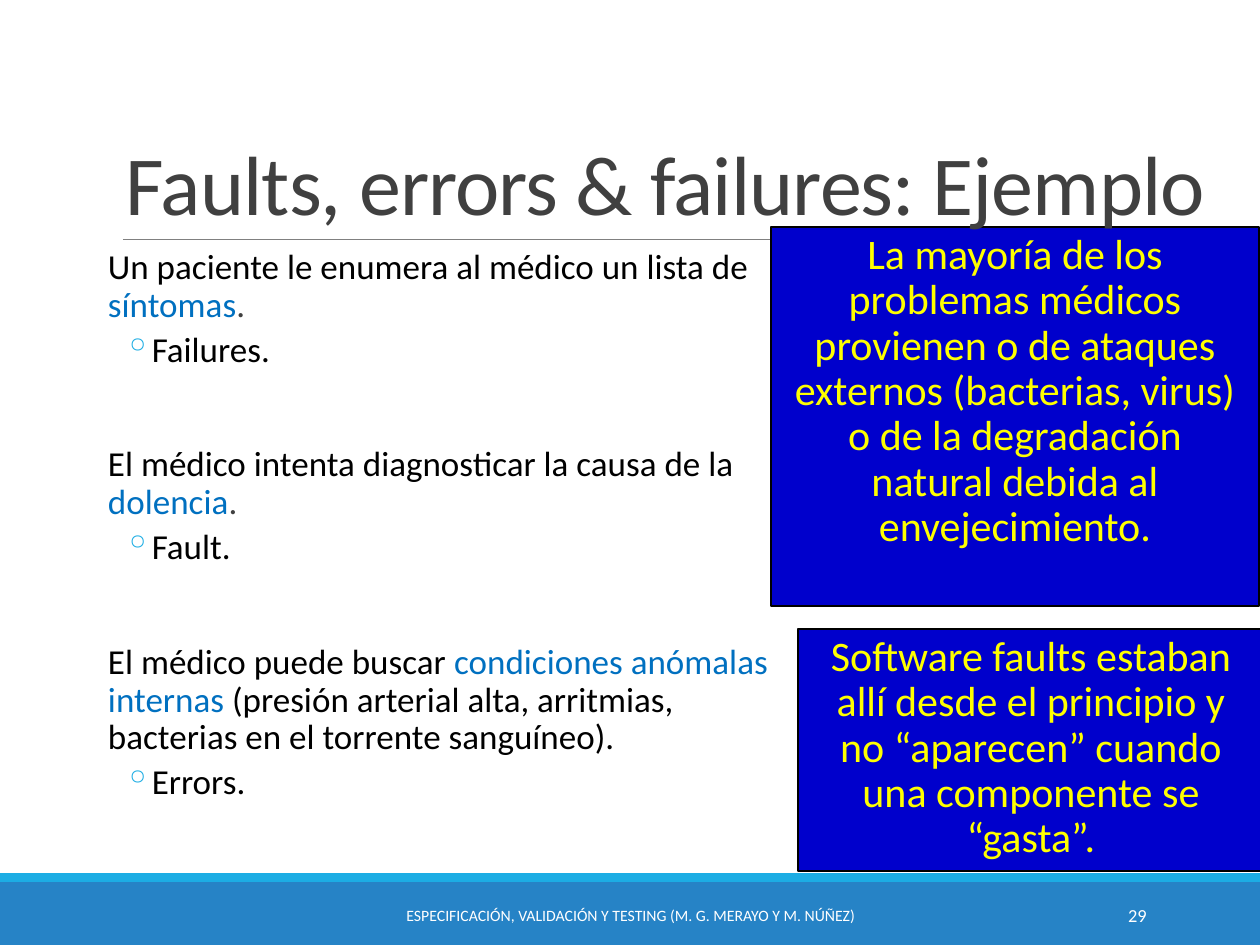
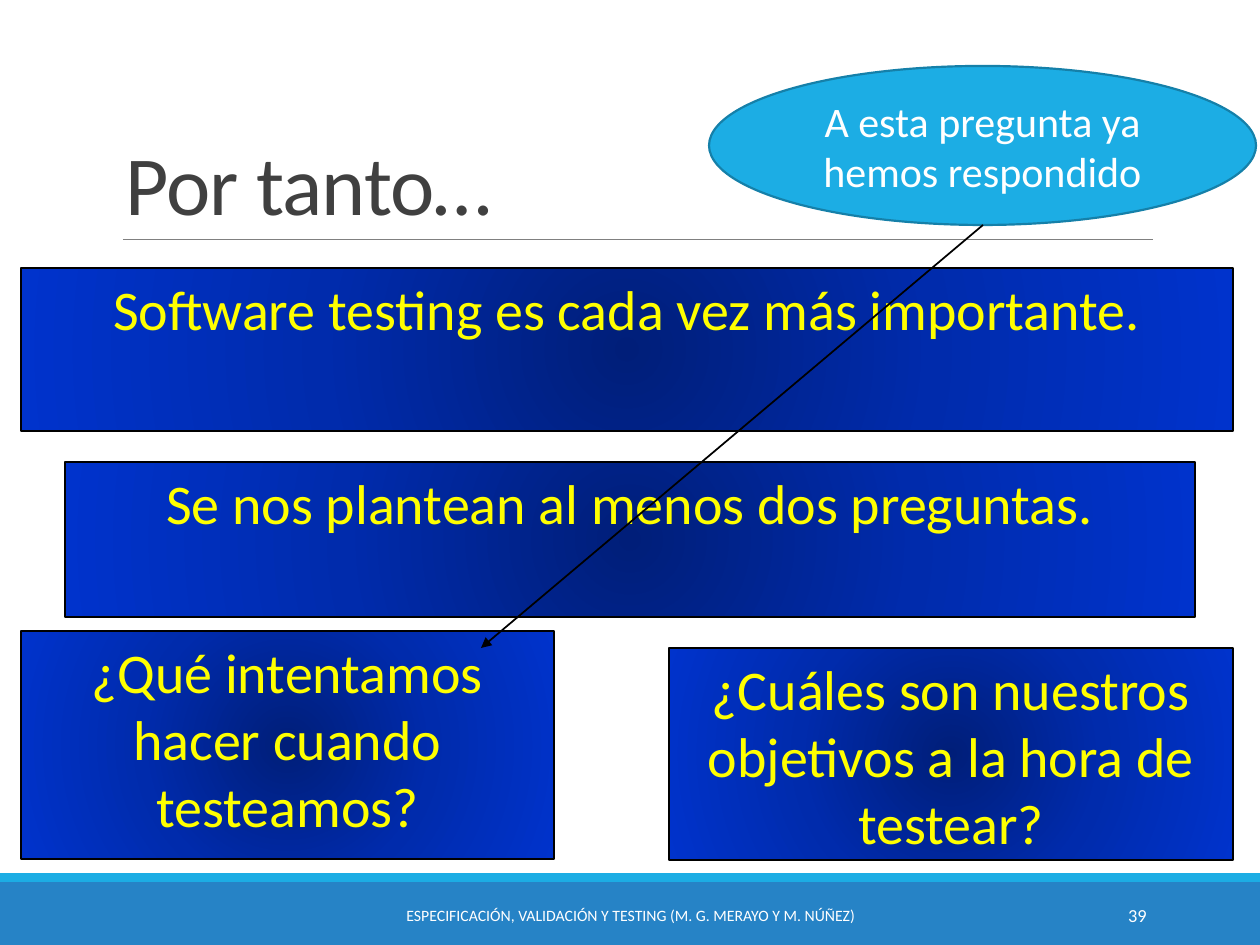
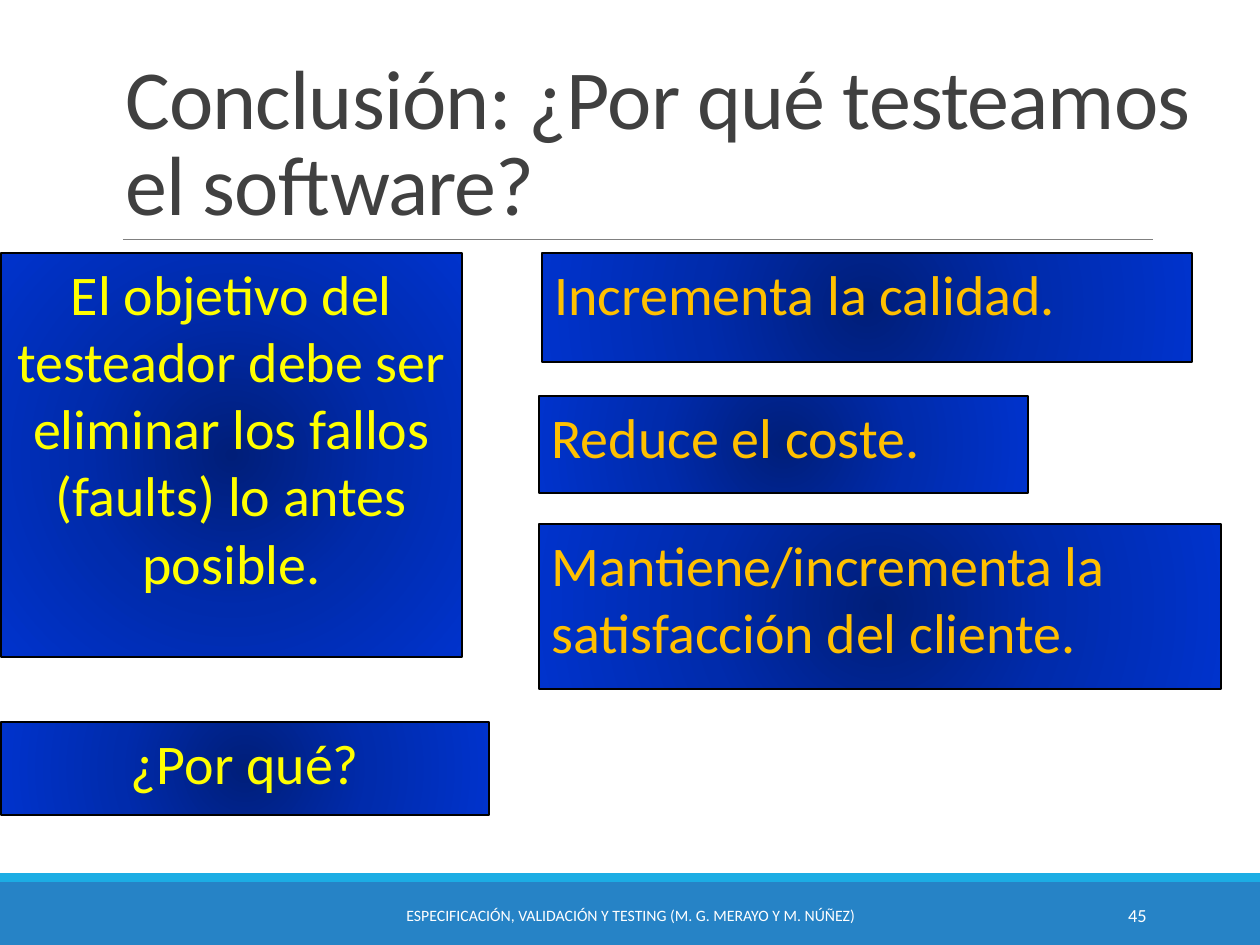
from dataclasses import dataclass

from pptx import Presentation
from pptx import oxml, util as u
from pptx.dml import color
from pptx.enum import shapes, text
from pptx.oxml import ns

# Shared look
EMU_PER_PX = 914400 / 126
PAGE_W, PAGE_H = 1260, 945
FONT = "Calibri"
BLUE, CYAN, CYAN_EDGE = "2683C6", "1CADE4", "1580A9"
NAVY, YELLOW, AMBER = "0000CC", "FFFF00", "FFC000"
BLACK, WHITE, GREY, RULE, TERM = "000000", "FFFFFF", "404040", "808080", "0070C0"
GLOW = ((0, "001E79"), (50, "002BAC"), (100, "0033CC"))
FOOTER = "ESPECIFICACIÓN, VALIDACIÓN Y TESTING (M. G. MERAYO Y M. NÚÑEZ)"
LEFT, CENTER, RIGHT = text.PP_ALIGN.LEFT, text.PP_ALIGN.CENTER, text.PP_ALIGN.RIGHT
TOP, MIDDLE, BOTTOM = text.MSO_ANCHOR.TOP, text.MSO_ANCHOR.MIDDLE, text.MSO_ANCHOR.BOTTOM
RECT, OVAL = shapes.MSO_SHAPE.RECTANGLE, shapes.MSO_SHAPE.OVAL


@dataclass(frozen=True)
class Area:
    left: int
    top: int
    width: int
    height: int


@dataclass(frozen=True)
class Style:
    size: float
    ink: str
    align: text.PP_ALIGN = LEFT
    anchor: text.MSO_ANCHOR = TOP
    spacing: float = 1.0
    tracking: int = 0


@dataclass(frozen=True)
class Panel:
    area: Area
    words: str
    style: Style
    fill: str | None = None  # None means the radial glow
    edge: str = BLACK
    edge_pt: float = 0.75
    outline: shapes.MSO_SHAPE = RECT


@dataclass(frozen=True)
class Symptom:
    spans: tuple[tuple[str, str], ...]
    kind: str


TITLE = Style(48, GREY, anchor=BOTTOM, spacing=0.85, tracking=-50)
FOOT = Style(9, WHITE, CENTER, MIDDLE)
NUMBER = Style(10.5, WHITE, RIGHT, MIDDLE)
REMARK = Style(24, YELLOW, CENTER, spacing=0.9)
CLAIM = Style(32, YELLOW, CENTER)
REASON = Style(32, AMBER)
CALLOUT = Style(24, WHITE, CENTER, MIDDLE)


# Helpers
def px(length: int) -> u.Emu:
    return u.Emu(round(length * EMU_PER_PX))


def rgb(code: str) -> color.RGBColor:
    return color.RGBColor.from_string(code)


def place(area: Area) -> tuple[u.Emu, ...]:
    return px(area.left), px(area.top), px(area.width), px(area.height)


def format_span(span, size: float, ink: str) -> None:
    span.font.name, span.font.size = FONT, u.Pt(size)
    span.font.color.rgb = rgb(ink)


def write(shape, words: str, style: Style) -> None:
    frame = shape.text_frame
    frame.text = words
    frame.word_wrap = True
    frame.vertical_anchor = style.anchor
    para = frame.paragraphs[0]
    para.alignment, para.line_spacing = style.align, style.spacing
    span = para.runs[0]
    format_span(span, style.size, style.ink)
    if style.tracking:
        span._r.get_or_add_rPr().set("spc", str(style.tracking))


def add_text(page, area: Area, words: str, style: Style) -> None:
    write(page.shapes.add_textbox(*place(area)), words, style)


def add_block(page, area: Area, fill: str, outline=RECT):
    block = page.shapes.add_shape(outline, *place(area))
    block.shadow.inherit = False
    block.fill.solid()
    block.fill.fore_color.rgb = rgb(fill)
    block.line.fill.background()
    return block


def apply_glow(shape) -> None:
    stops = "".join(f'<a:gs pos="{at * 1000}"><a:srgbClr val="{code}"/></a:gs>'
                    for at, code in GLOW)
    glow = oxml.parse_xml(
        f'<a:gradFill {ns.nsdecls("a")}><a:gsLst>{stops}</a:gsLst><a:path path="circle">'
        '<a:fillToRect l="50000" t="50000" r="50000" b="50000"/></a:path></a:gradFill>')
    props = shape._element.spPr
    props.replace(props.find(ns.qn("a:solidFill")), glow)


def add_panel(page, panel: Panel) -> None:
    box = add_block(page, panel.area, panel.fill or NAVY, panel.outline)
    if panel.fill is None:
        apply_glow(box)
    box.line.color.rgb = rgb(panel.edge)
    box.line.width = u.Pt(panel.edge_pt)
    write(box, panel.words, panel.style)


def add_line(page, start: tuple[int, int], end: tuple[int, int],
             ink: str, width: float, arrow: bool = False) -> None:
    line = page.shapes.add_connector(shapes.MSO_CONNECTOR.STRAIGHT,
                                     *map(px, start + end))
    line.line.color.rgb = rgb(ink)
    line.line.width = u.Pt(width)
    if arrow:
        line.line._get_or_add_ln().append(
            oxml.parse_xml(f'<a:tailEnd {ns.nsdecls("a")} type="triangle"/>'))
    line._element.spPr.append(oxml.parse_xml(f'<a:effectLst {ns.nsdecls("a")}/>'))


def indent(para, margin: int, first: int) -> None:
    props = para._p.get_or_add_pPr()
    props.set("marL", str(px(margin)))
    props.set("indent", str(px(first)))


def add_bullet(para) -> None:
    props = para._p.get_or_add_pPr()
    props.append(oxml.parse_xml(
        f'<a:buClr {ns.nsdecls("a")}><a:srgbClr val="{CYAN}"/></a:buClr>'))
    props.append(oxml.parse_xml(f'<a:buChar {ns.nsdecls("a")} char="◦"/>'))


def add_symptoms(page, area: Area, symptoms: tuple[Symptom, ...]) -> None:
    frame = page.shapes.add_textbox(*place(area)).text_frame
    frame.word_wrap = True
    frame.margin_left = frame.margin_right = 0
    for index, symptom in enumerate(symptoms):
        para = frame.add_paragraph() if index else frame.paragraphs[0]
        para.line_spacing, para.space_after = 0.9, u.Pt(2)
        para.space_before = u.Pt(40 if index else 12)
        indent(para, 12, 0)
        for words, ink in symptom.spans:
            span = para.add_run()
            span.text = words
            format_span(span, 20, ink)
        para = frame.add_paragraph()
        para.text = symptom.kind
        para.level, para.line_spacing = 1, 0.9
        para.space_before, para.space_after = u.Pt(2), u.Pt(4)
        indent(para, 53, -25)
        add_bullet(para)
        format_span(para.runs[0], 20, BLACK)


def start_page(deck):
    page = deck.slides.add_slide(deck.slide_layouts[6])
    add_block(page, Area(0, 882, PAGE_W, 63), BLUE)
    add_block(page, Area(0, 873, PAGE_W, 9), CYAN)
    add_line(page, (123, 239), (1153, 239), RULE, 0.5)
    return page


def finish_page(page, title: str, number: int, title_width: int = 1133) -> None:
    add_text(page, Area(381, 890, 499, 50), FOOTER, FOOT)
    add_text(page, Area(1023, 890, 136, 50), str(number), NUMBER)
    add_text(page, Area(113, 39, title_width, 200), title, TITLE)


# Content
SYMPTOMS = (
    Symptom((("Un paciente le enumera al médico un lista de ", BLACK),
             ("síntomas", TERM), (".", GREY)), "Failures."),
    Symptom((("El médico intenta diagnosticar la causa de la ", BLACK),
             ("dolencia", TERM), (".", GREY)), "Fault."),
    Symptom((("El médico puede buscar ", BLACK),
             ("condiciones anómalas internas ", TERM),
             ("(presión arterial alta, arritmias, bacterias en el torrente sanguíneo).",
              BLACK)), "Errors."),
)
REMARKS = (
    Panel(Area(798, 629, 466, 242),
          "Software faults estaban allí desde el principio y no “aparecen” "
          "cuando una componente se “gasta”.", REMARK, NAVY, edge_pt=1),
    Panel(Area(771, 227, 488, 379),
          "La mayoría de los problemas médicos provienen o de ataques externos "
          "(bacterias, virus) o de la degradación natural debida al envejecimiento.",
          REMARK, NAVY, edge_pt=1),
)
QUESTIONS = (
    Panel(Area(21, 268, 1212, 163), "Software testing es cada vez más importante.", CLAIM),
    Panel(Area(65, 462, 1130, 155), "Se nos plantean al menos dos preguntas.", CLAIM),
    Panel(Area(669, 648, 564, 212),
          "¿Cuáles son nuestros objetivos a la hora de testear?", CLAIM),
    Panel(Area(21, 631, 533, 228), "¿Qué intentamos hacer cuando testeamos?", CLAIM),
)
ANSWERED = Panel(Area(709, 66, 547, 159), "A esta pregunta ya hemos respondido",
                 CALLOUT, CYAN, CYAN_EDGE, 1.25, OVAL)
CONCLUSIONS = (
    Panel(Area(1, 253, 461, 404),
          "El objetivo del testeador debe ser eliminar los fallos (faults) "
          "lo antes posible.", CLAIM),
    Panel(Area(542, 253, 650, 109), "Incrementa la calidad.", REASON),
    Panel(Area(1, 722, 488, 93), "¿Por qué?", CLAIM),
    Panel(Area(539, 396, 489, 97), "Reduce el coste.", REASON),
    Panel(Area(539, 524, 682, 165),
          "Mantiene/incrementa la satisfacción del cliente.", REASON),
)


def main() -> None:
    deck = Presentation()
    deck.slide_width, deck.slide_height = px(PAGE_W), px(PAGE_H)

    # Medical example
    page = start_page(deck)
    add_symptoms(page, Area(96, 243, 673, 600), SYMPTOMS)
    for panel in REMARKS:
        add_panel(page, panel)
    finish_page(page, "Faults, errors & failures: Ejemplo", 29, 1111)

    # Two questions
    page = start_page(deck)
    for panel in QUESTIONS + (ANSWERED,):
        add_panel(page, panel)
    add_line(page, (983, 225), (481, 648), BLACK, 1, arrow=True)
    finish_page(page, "Por tanto…", 39)

    # Conclusion
    page = start_page(deck)
    for panel in CONCLUSIONS:
        add_panel(page, panel)
    finish_page(page, "Conclusión: ¿Por qué testeamos el software?", 45)

    deck.save("out.pptx")


if __name__ == "__main__":
    main()
